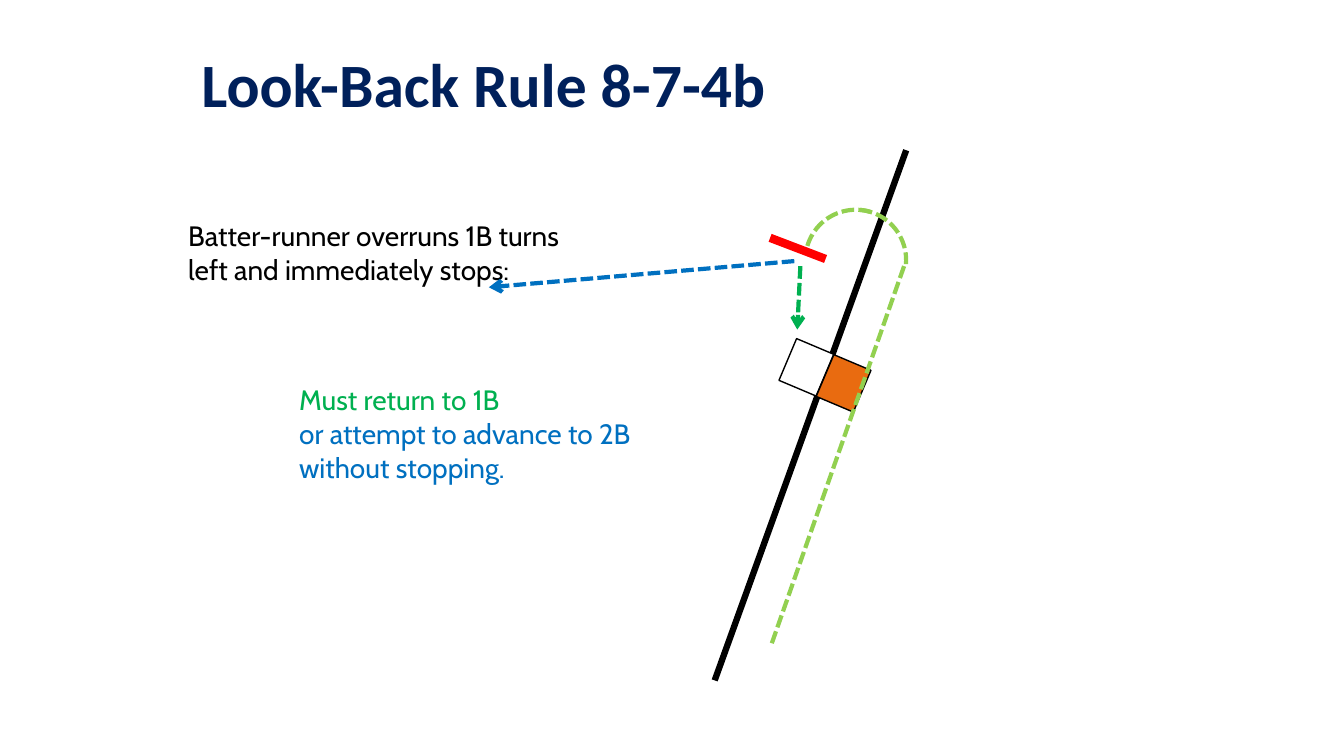
from dataclasses import dataclass

from lxml.etree import SubElement
from pptx import Presentation
from pptx.dml.color import RGBColor
from pptx.enum.dml import MSO_LINE_DASH_STYLE as Dash
from pptx.enum.shapes import MSO_CONNECTOR as Connector, MSO_SHAPE as Preset
from pptx.enum.text import MSO_ANCHOR as Anchor, MSO_AUTO_SIZE as AutoSize
from pptx.oxml.ns import qn
from pptx.util import Pt

BLACK, WHITE, NAVY, ORANGE, RED = "000000", "FFFFFF", "00205B", "E96B10", "FF0000"
RUN_GREEN, RETURN_GREEN, ADVANCE_BLUE = "92D050", "00B050", "0070C0"


@dataclass
class Path:
    start: tuple[float, float]
    end: tuple[float, float]
    color: str
    width: float
    dashed: bool = False
    arrow: bool = False


@dataclass
class Outline:
    preset: Preset
    left: float
    top: float
    width: float
    height: float
    rotation: float
    line_color: str
    line_width: float
    fill: str | None = None
    dashed: bool = False


def rgb(color: str) -> RGBColor:
    return RGBColor.from_string(color)


def style_line(line, color: str, width: float, dashed: bool) -> None:
    line.color.rgb = rgb(color)
    line.width = Pt(width)
    if dashed:
        line.dash_style = Dash.SQUARE_DOT


def draw_path(shapes, path: Path) -> None:
    points = (Pt(value) for value in (*path.start, *path.end))
    connector = shapes.add_connector(Connector.STRAIGHT, *points)
    style_line(connector.line, path.color, path.width, path.dashed)
    if path.arrow:
        SubElement(connector.get_or_add_ln(), qn("a:tailEnd"), type="arrow")
    SubElement(connector._element.spPr, qn("a:effectLst"))


def draw_outline(shapes, outline: Outline) -> None:
    box = (outline.left, outline.top, outline.width, outline.height)
    shape = shapes.add_shape(outline.preset, *map(Pt, box))
    shape.rotation = outline.rotation
    shape.shadow.inherit = False
    if outline.fill:
        shape.fill.solid()
        shape.fill.fore_color.rgb = rgb(outline.fill)
    else:
        shape.fill.background()
    style_line(shape.line, outline.line_color, outline.line_width, outline.dashed)


def add_text(shapes, lines: list[tuple[str, str]], *, left: float, top: float,
             width: float, height: float, size: float = 20, font: str = "Cabin",
             bold: bool = False, anchor: Anchor = Anchor.TOP,
             spacing: float = 1.0, grow: bool = True) -> None:
    frame = shapes.add_textbox(*map(Pt, (left, top, width, height))).text_frame
    frame.word_wrap = True
    frame.auto_size = AutoSize.SHAPE_TO_FIT_TEXT if grow else AutoSize.NONE
    frame.vertical_anchor = anchor
    for index, (text, color) in enumerate(lines):
        paragraph = frame.add_paragraph() if index else frame.paragraphs[0]
        paragraph.line_spacing = spacing
        run = paragraph.add_run()
        run.text = text
        run.font.name = font
        run.font.size = Pt(size)
        run.font.bold = bold
        run.font.color.rgb = rgb(color)


def main() -> None:
    deck = Presentation()
    deck.slide_width, deck.slide_height = Pt(960), Pt(540)
    shapes = deck.slides.add_slide(deck.slide_layouts[6]).shapes

    # Title
    add_text(shapes, [("Look-Back Rule 8-7-4b", NAVY)], left=136.8, top=13.7,
             width=689.8, height=97.9, size=44, font="Calibri", bold=True,
             anchor=Anchor.MIDDLE, spacing=0.9, grow=False)

    # Foul line
    draw_path(shapes, Path((510.5, 486), (647.3, 107.3), BLACK, 4.5))

    # Double first base
    for index, fill in enumerate((WHITE, ORANGE)):
        draw_outline(shapes, Outline(Preset.RECTANGLE, 561.6 + 26.6 * index,
                                     246.2 + 11.5 * index, 28.8, 32.4, 22.9,
                                     BLACK, 1, fill))

    # Explanation
    add_text(shapes, [("Must return to 1B", RETURN_GREEN),
                      ("or attempt to advance to 2B without stopping.", ADVANCE_BLUE)],
             left=206.6, top=270, width=288, height=79.9)
    add_text(shapes, [("Batter-runner overruns 1B turns left and immediately stops:", BLACK)],
             left=127.4, top=152.6, width=285.8, height=55.4)

    # Stopping point
    draw_path(shapes, Path((550.1, 169.9), (589.7, 185), RED, 6))

    # Left turn: two quarter circles around one centre
    for rotation in (286.4, 4.6):
        draw_outline(shapes, Outline(Preset.ARC, 575.3, 149.8, 72, 72, rotation,
                                     RUN_GREEN, 3, dashed=True))

    # Run to first, return to first, advance to second
    for path in (
        Path((645.8, 190.1), (550.8, 461), RUN_GREEN, 3, dashed=True),
        Path((571.7, 190.1), (569.5, 235.4), RETURN_GREEN, 3, dashed=True, arrow=True),
        Path((567.4, 186.5), (349.2, 205.2), ADVANCE_BLUE, 3, dashed=True, arrow=True),
    ):
        draw_path(shapes, path)

    deck.save("out.pptx")


if __name__ == "__main__":
    main()
